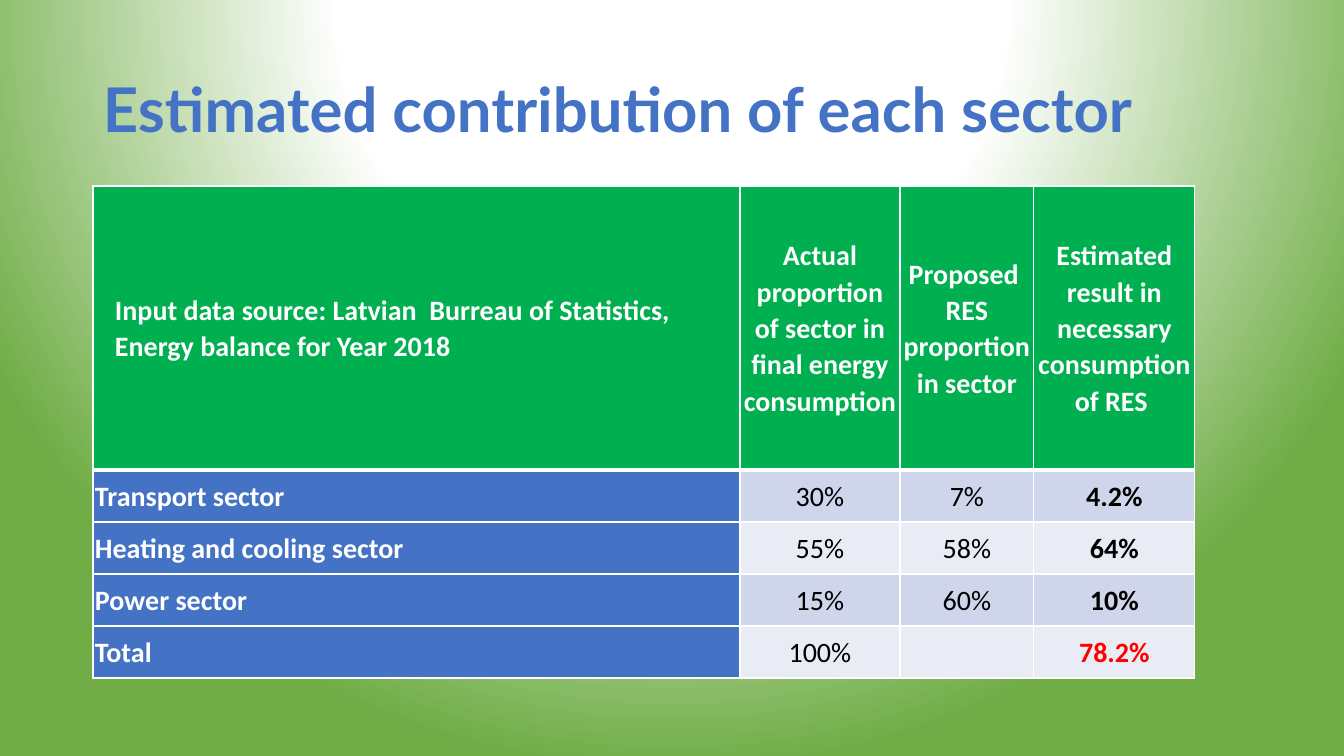
"""Build the slide on the estimated contribution of each sector."""

from dataclasses import dataclass
from typing import NamedTuple

from lxml.etree import SubElement
from pptx import Presentation
from pptx.dml.color import RGBColor
from pptx.enum.text import MSO_ANCHOR as Anchor, PP_ALIGN as Align
from pptx.oxml import parse_xml
from pptx.oxml.ns import nsdecls, qn
from pptx.slide import Slide
from pptx.table import _Cell as Cell
from pptx.text.text import TextFrame
from pptx.util import Emu, Pt

EMU_PER_PX = 12192000 / 1344


@dataclass(frozen=True)
class Theme:
    title_font: str = "Lato"
    body_font: str = "Calibri"
    title_size: int = 44
    body_size: int = 20
    blue: str = "4472C4"
    green: str = "00B050"
    edge_green: str = "70AD47"
    white: str = "FFFFFF"
    black: str = "000000"
    red: str = "FF0000"
    bands: tuple[str, str] = ("CFD5EA", "E9EBF5")


class Box(NamedTuple):
    left: int
    top: int
    width: int
    height: int


class TextStyle(NamedTuple):
    font: str
    size: int
    color: str
    bold: bool
    align: Align
    spacing: float


class Sector(NamedTuple):
    name: str
    actual: str
    proposed: str
    result: str


THEME = Theme()
TITLE_BOX = Box(93, 40, 1159, 146)
TABLE_BOX = Box(93, 186, 1102, 492)
COLUMN_WIDTHS = (647, 160, 134, 161)
HEADER_HEIGHT = 284
HEADER_INDENT = 20
CELL_MARGIN = 2
THIN, THICK = 1, 3

HEADERS = (
    "Input data source: Latvian  Burreau of Statistics, Energy balance for Year 2018",
    "Actual proportion of sector in final energy consumption",
    "Proposed  RES proportion in sector",
    "Estimated result in necessary consumption of RES ",
)
SECTORS = (
    Sector("Transport sector", "30%", "7%", "4.2%"),
    Sector("Heating and cooling sector", "55%", "58%", "64%"),
    Sector("Power sector", "15%", "60%", "10%"),
    Sector("Total", "100%", "", "78.2%"),
)


def px(length: int) -> Emu:
    """Turn pixels into EMU."""
    return Emu(round(length * EMU_PER_PX))


def write(text_frame: TextFrame, text: str, style: TextStyle) -> None:
    """Set one paragraph of text and format it."""
    text_frame.text = text
    paragraph = text_frame.paragraphs[0]
    paragraph.alignment = style.align
    paragraph.line_spacing = style.spacing
    for run in paragraph.runs:
        run.font.name = style.font
        run.font.size = Pt(style.size)
        run.font.bold = style.bold
        run.font.color.rgb = RGBColor.from_string(style.color)


def paint_background(slide: Slide) -> None:
    """Fill the background with a white to green radial gradient."""
    slide.background.fill.solid()
    properties = slide.element.find(".//" + qn("p:bgPr"))
    stops = ((0, THEME.white), (43, THEME.white), (100, THEME.edge_green))
    stop_xml = "".join(
        f'<a:gs pos="{position * 1000}"><a:srgbClr val="{color}"/></a:gs>'
        for position, color in stops
    )
    gradient = parse_xml(
        f'<a:gradFill {nsdecls("a")} rotWithShape="1"><a:gsLst>{stop_xml}</a:gsLst>'
        '<a:path path="circle"><a:fillToRect l="50000" t="-80000" r="50000" b="180000"/>'
        "</a:path></a:gradFill>"
    )
    properties.replace(properties.find(qn("a:solidFill")), gradient)


def add_title(slide: Slide, text: str) -> None:
    """Add the slide title."""
    text_frame = slide.shapes.add_textbox(*map(px, TITLE_BOX)).text_frame
    text_frame.word_wrap = True
    text_frame.vertical_anchor = Anchor.MIDDLE
    write(text_frame, text, TextStyle(
        THEME.title_font, THEME.title_size, THEME.blue, True, Align.LEFT, 0.9))


def set_borders(cell: Cell, top: int, bottom: int) -> None:
    """Draw white borders on the four sides of a cell."""
    properties = cell._tc.get_or_add_tcPr()
    widths = {"lnL": THIN, "lnR": THIN, "lnT": top, "lnB": bottom}
    for index, (side, width) in enumerate(widths.items()):
        line = SubElement(properties, qn(f"a:{side}"), w=str(Pt(width)))
        fill = SubElement(line, qn("a:solidFill"))
        SubElement(fill, qn("a:srgbClr"), val=THEME.white)
        properties.insert(index, line)


def fill_cell(cell: Cell, text: str, row: int, column: int) -> None:
    """Write and style one table cell by its place in the grid."""
    is_header, is_name, is_result = row == 0, column == 0, column == 3
    if is_header:
        fill, color = THEME.green, THEME.white
    elif is_name:
        fill, color = THEME.blue, THEME.white
    else:
        is_total = is_result and row == len(SECTORS)
        fill = THEME.bands[(row - 1) % 2]
        color = THEME.red if is_total else THEME.black
    cell.fill.solid()
    cell.fill.fore_color.rgb = RGBColor.from_string(fill)
    set_borders(cell, THICK if row == 1 else THIN, THICK if is_header else THIN)
    cell.vertical_anchor = Anchor.MIDDLE
    cell.margin_left = cell.margin_right = px(CELL_MARGIN)
    cell.margin_top = cell.margin_bottom = 0
    write(cell.text_frame, text, TextStyle(
        THEME.body_font, THEME.body_size, color, is_header or is_name or is_result,
        Align.LEFT if is_name else Align.CENTER, 1.06))
    if is_header and is_name:
        paragraph = cell.text_frame.paragraphs[0]
        paragraph._p.get_or_add_pPr().set("marL", str(px(HEADER_INDENT)))


def add_sector_table(slide: Slide) -> None:
    """Add the table of sectors and their shares."""
    rows = (HEADERS, *SECTORS)
    table = slide.shapes.add_table(
        len(rows), len(HEADERS), *map(px, TABLE_BOX)).table
    for column, width in zip(table.columns, COLUMN_WIDTHS):
        column.width = px(width)
    sector_height = (TABLE_BOX.height - HEADER_HEIGHT) // len(SECTORS)
    for row_index, texts in enumerate(rows):
        table.rows[row_index].height = px(sector_height if row_index else HEADER_HEIGHT)
        for column_index, text in enumerate(texts):
            fill_cell(table.cell(row_index, column_index), text, row_index, column_index)


def main() -> None:
    """Build and save the presentation."""
    presentation = Presentation()
    presentation.slide_width, presentation.slide_height = px(1344), px(756)
    slide = presentation.slides.add_slide(presentation.slide_layouts[6])
    paint_background(slide)
    add_title(slide, "Estimated contribution of each sector")
    add_sector_table(slide)
    presentation.save("out.pptx")


if __name__ == "__main__":
    main()
